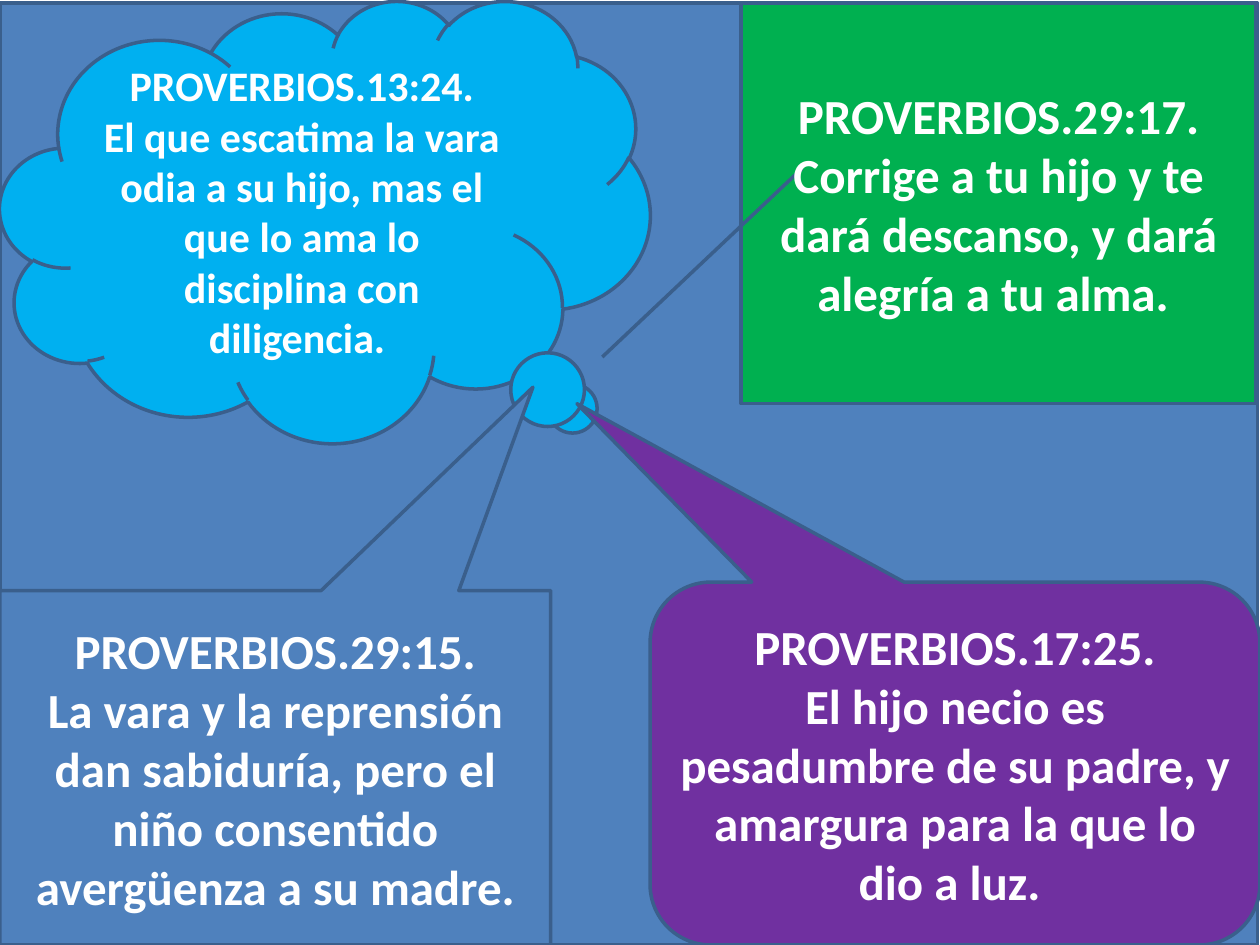
"""Build a slide of four proverbs in callouts over a blue panel."""
from pptx import Presentation
from pptx import util as u
from pptx.dml.color import RGBColor
from pptx.enum import shapes, text

WIDE, HIGH = 10, 7.5
KIND = shapes.MSO_SHAPE
THEME = {
    "font": "Calibri", "text": "FFFFFF", "edge": "3A5F8C", "line": 2,
    "blue": "4F81BD", "sky": "00B0F0", "green": "00B050", "plum": "7030A0",
    "small": 24, "large": 28,
}
PANEL = (0, 0.003, 0.998, 0.997)
VERSES = [
    {"kind": KIND.CLOUD_CALLOUT, "box": (0, 0, 0.516, 0.468),
     "tail": (0.389, 0.433), "fill": "sky", "size": "small",
     "lines": ("PROVERBIOS.13:24.",
               "El que escatima la vara odia a su hijo, mas el que lo ama "
               "lo disciplina con diligencia. ")},
    {"kind": KIND.RECTANGULAR_CALLOUT, "box": (0, 0.625, 0.437, 0.375),
     "tail": (0.468, -1.074), "fill": "blue", "size": "large",
     "lines": ("PROVERBIOS.29:15.",
               "La vara y la reprensión dan sabiduría, pero el niño "
               "consentido avergüenza a su madre.")},
    {"kind": KIND.LINE_CALLOUT_1, "box": (0.588, 0.003, 0.409, 0.424),
     "tail": (0.413, 0.119, 0.884, -0.269), "fill": "green", "size": "large",
     "lines": ("PROVERBIOS.29:17.",
               "Corrige a tu hijo y te dará descanso, y dará alegría "
               "a tu alma. ")},
    {"kind": KIND.ROUNDED_RECTANGULAR_CALLOUT,
     "box": (0.516, 0.616, 0.484, 0.384),
     "tail": (-0.62, -0.992, 0.167), "fill": "plum", "size": "large",
     "lines": ("PROVERBIOS.17:25.",
               "El hijo necio es pesadumbre de su padre, y amargura "
               "para la que lo dio a luz. ")},
]


def tint(name):
    return RGBColor.from_string(THEME[name])


def draw(slide, kind, box, fill):
    place = [u.Inches(part * side)
             for part, side in zip(box, (WIDE, HIGH, WIDE, HIGH))]
    shape = slide.shapes.add_shape(kind, *place)
    shape.shadow.inherit = False
    shape.fill.solid()
    shape.fill.fore_color.rgb = tint(fill)
    shape.line.color.rgb = tint("edge")
    shape.line.width = u.Pt(THEME["line"])
    return shape


def write(shape, lines, size):
    frame = shape.text_frame
    frame.text = "\n".join(lines)
    frame.word_wrap = True
    frame.vertical_anchor = text.MSO_ANCHOR.MIDDLE
    for para in frame.paragraphs:
        para.alignment = text.PP_ALIGN.CENTER
        for run in para.runs:
            run.font.name = THEME["font"]
            run.font.size = u.Pt(THEME[size])
            run.font.bold = True
            run.font.color.rgb = tint("text")


def main():
    deck = Presentation()
    deck.slide_width, deck.slide_height = u.Inches(WIDE), u.Inches(HIGH)
    slide = deck.slides.add_slide(deck.slide_layouts[6])
    draw(slide, KIND.RECTANGLE, PANEL, "blue")
    for verse in VERSES:
        shape = draw(slide, verse["kind"], verse["box"], verse["fill"])
        for index, value in enumerate(verse["tail"]):
            shape.adjustments[index] = value
        write(shape, verse["lines"], verse["size"])
    deck.save("out.pptx")


if __name__ == "__main__":
    main()
